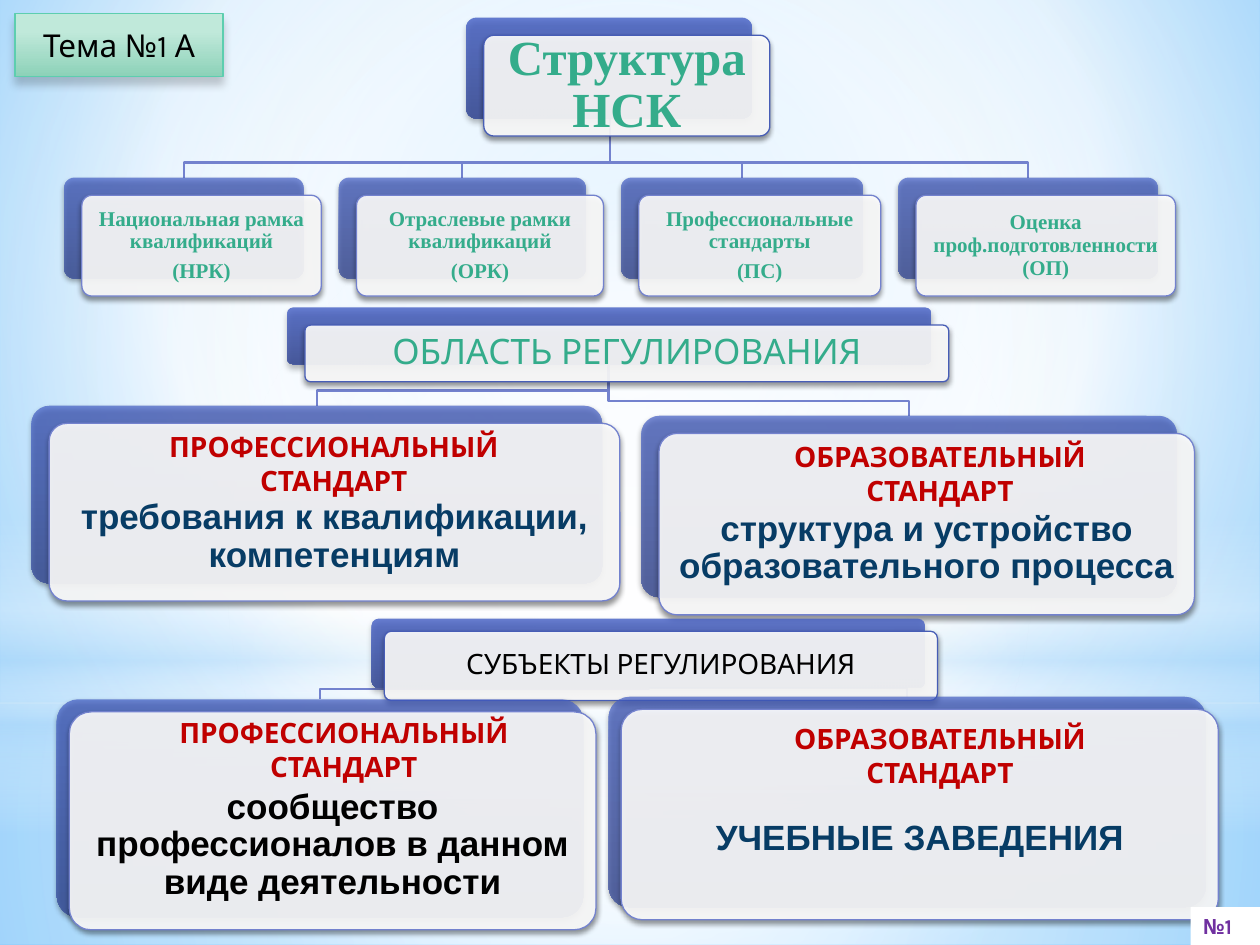
from lxml.etree import SubElement
from pptx import Presentation
from pptx.dml.color import RGBColor
from pptx.enum.shapes import MSO_SHAPE
from pptx.enum.text import MSO_ANCHOR, PP_ALIGN
from pptx.oxml.ns import qn
from pptx.util import Inches, Pt

WHITE = RGBColor(0xFF, 0xFF, 0xFF)
BLACK = RGBColor(0x00, 0x00, 0x00)
SKY = RGBColor(0xB4, 0xDC, 0xFA)
SKY_LIGHT = RGBColor(0x9E, 0xD5, 0xFF)
SKY_DEEP = RGBColor(0x5B, 0xB9, 0xFF)
BLUE_TOP = RGBColor(0x43, 0x5E, 0xC5)
BLUE_BOTTOM = RGBColor(0x2B, 0x40, 0x92)
BRANCH_BLUE = RGBColor(0x73, 0x82, 0xCE)
ROOT_BLUE = RGBColor(0x47, 0x5D, 0xB6)
GREEN = RGBColor(0x34, 0xAC, 0x8B)
MINT_TOP = RGBColor(0xC0, 0xE9, 0xDA)
MINT_BOTTOM = RGBColor(0x8C, 0xD1, 0xB8)
MINT_LINE = RGBColor(0x5D, 0xCE, 0xAF)
RED = RGBColor(0xC0, 0x00, 0x00)
NAVY = RGBColor(0x07, 0x3C, 0x65)
PURPLE = RGBColor(0x70, 0x30, 0xA0)

SERIF, SANS, BODY = "Times New Roman", "Karla", "Arial"
CENTER_FOCUS = (50, 50, 50, 50)
CARD_SHADOW = (45, 3.1, 1.8)
ROOT_SHADOW = (32, 3.5, 2.2)
EMPTY_LINE = 0.39


def add_color(parent, color, alpha):
    node = SubElement(parent, qn("a:srgbClr"), val=str(color))
    if alpha < 100:
        SubElement(node, qn("a:alpha"), val=str(alpha * 1000))


def set_gradient(properties, stops, focus=None):
    solid = properties.find(qn("a:solidFill"))
    gradient = SubElement(properties, qn("a:gradFill"), rotWithShape="1")
    properties.replace(solid, gradient)
    stop_list = SubElement(gradient, qn("a:gsLst"))
    for position, color, alpha in stops:
        stop = SubElement(stop_list, qn("a:gs"), pos=str(position * 1000))
        add_color(stop, color, alpha)
    if focus:
        circle = SubElement(gradient, qn("a:path"), **{"path": "circle"})
        sides = {side: str(value * 1000) for side, value in zip("ltrb", focus)}
        SubElement(circle, qn("a:fillToRect"), **sides)
    else:
        SubElement(gradient, qn("a:lin"), ang="5400000", scaled="0")


def add_shadow(shape, alpha, blur, distance):
    effects = shape.element.spPr.find(qn("a:effectLst"))
    shadow = SubElement(effects, qn("a:outerShdw"), blurRad=str(Pt(blur)),
                        dist=str(Pt(distance)), dir="5400000", rotWithShape="0")
    add_color(shadow, BLACK, alpha)


def add_panel(slide, kind, box, fill=WHITE, stops=None, focus=None, line=None):
    shape = slide.shapes.add_shape(kind, *map(Inches, box))
    shape.shadow.inherit = False
    shape.fill.solid()
    shape.fill.fore_color.rgb = fill
    if stops:
        set_gradient(shape.element.spPr, stops, focus)
    if line is None:
        shape.line.fill.background()
    else:
        shape.line.color.rgb = line
        shape.line.width = Pt(0.75)
    if kind == MSO_SHAPE.ROUNDED_RECTANGLE:
        shape.adjustments[0] = 0.1
    return shape


def write(shape, lines, font, size, color, bold=True, align=PP_ALIGN.CENTER):
    frame = shape.text_frame
    frame.word_wrap = True
    for index, line in enumerate(lines):
        paragraph = frame.add_paragraph() if index else frame.paragraphs[0]
        paragraph.text = line
        paragraph.alignment = align
        paragraph.font.name = font
        paragraph.font.size = Pt(size)
        paragraph.font.bold = bold
        paragraph.font.color.rgb = color
    return frame


def add_background(slide):
    slide.background.fill.solid()
    set_gradient(slide.element.find(".//" + qn("p:bgPr")),
                 [(0, SKY_LIGHT, 100), (60, WHITE, 100), (100, SKY_DEEP, 100)],
                 (20, 10, 20, 60))
    rectangle = MSO_SHAPE.RECTANGLE
    add_panel(slide, rectangle, (0, 5.58, 10, 1.92), focus=CENTER_FOCUS,
              stops=[(0, WHITE, 91), (37, WHITE, 76), (100, SKY, 79)])
    add_panel(slide, rectangle, (0, 0, 10, 5.58), focus=CENTER_FOCUS,
              stops=[(0, WHITE, 89), (48, WHITE, 62), (100, SKY, 79)])
    add_panel(slide, rectangle, (0, 4.12, 10, 2.5),
              stops=[(0, WHITE, 0), (29, WHITE, 30), (45, SKY, 40),
                     (55, WHITE, 26), (65, SKY, 60), (100, WHITE, 0)])
    add_panel(slide, MSO_SHAPE.OVAL, (0, 1.75, 10, 5.58), focus=CENTER_FOCUS,
              stops=[(0, WHITE, 100), (56, WHITE, 0)])


def add_branch(slide, start, bend, end):
    points = [(start[0], bend), (end[0], bend), end]
    builder = slide.shapes.build_freeform(Inches(start[0]), Inches(start[1]))
    builder.add_line_segments([(Inches(x), Inches(y)) for x, y in points], close=False)
    branch = builder.convert_to_shape()
    branch.shadow.inherit = False
    branch.fill.background()
    branch.line.color.rgb = BRANCH_BLUE
    branch.line.width = Pt(1.25)


def add_card(slide, box, offset, lines, font, size, color, bold=True,
             inset=0.08, top_gap=0, root=False):
    left, top, width, height = box
    alpha = 80 if root else 70
    rounded = MSO_SHAPE.ROUNDED_RECTANGLE
    back = add_panel(slide, rounded, box,
                     stops=[(0, BLUE_TOP, alpha), (100, BLUE_BOTTOM, alpha)])
    add_shadow(back, *(ROOT_SHADOW if root else CARD_SHADOW))
    front = add_panel(slide, rounded, (left + offset, top + offset, width, height),
                      line=ROOT_BLUE if root else BRANCH_BLUE)
    fill_color = front.element.spPr.find(qn("a:solidFill"))[0]
    SubElement(fill_color, qn("a:alpha"), val="90000")
    add_shadow(front, *CARD_SHADOW)
    edge = min(width, height) * 0.03
    label = slide.shapes.add_textbox(
        Inches(left + offset + edge), Inches(top + offset + edge),
        Inches(width - 2 * edge), Inches(height - 2 * edge))
    frame = write(label, lines, font, size, color, bold)
    frame.vertical_anchor = MSO_ANCHOR.MIDDLE
    frame.margin_left = frame.margin_right = frame.margin_bottom = Inches(inset)
    frame.margin_top = Inches(inset + top_gap)
    for paragraph in frame.paragraphs:
        paragraph.line_spacing = 0.9
        paragraph.space_after = Pt(size * 0.35)


def add_heading(slide, box, lines):
    heading = slide.shapes.add_textbox(*map(Inches, box))
    write(heading, lines, SANS, 16, RED)


def add_structure(slide):
    columns = [
        (0.51, 1.9, ["Национальная рамка квалификаций", "(НРК)"]),
        (2.69, 1.96, ["Отраслевые рамки квалификаций", "(ОРК)"]),
        (4.93, 1.92, ["Профессиональные стандарты", "(ПС)"]),
        (7.13, 2.06, ["Оценка проф.подготовленности (ОП)"]),
    ]
    for left, width, _ in columns:
        add_branch(slide, (4.84, 0.94), 1.29, (left + width / 2, 1.41))
    add_card(slide, (3.7, 0.14, 2.27, 0.8), 0.14, ["Структура НСК"],
             SERIF, 28, GREEN, inset=0.12, root=True)
    for left, width, lines in columns:
        add_card(slide, (left, 1.41, width, 0.8), 0.14, lines,
                 SERIF, 12, GREEN, inset=0.05)


def add_section(slide, root_box, offset, title, size, color, start, cards):
    for (left, top, width, _), _, _, bend in cards:
        add_branch(slide, start, bend, (left + width / 2, top))
    add_card(slide, root_box, offset, [title], SANS, size, color, bold=False, root=True)
    for box, text, text_color, _ in cards:
        add_card(slide, box, offset, [text], BODY, 20, text_color, top_gap=EMPTY_LINE)


def add_headings(slide, left, professional_top, educational_top):
    add_heading(slide, (left, professional_top, 4.06, 0.64),
                ["ПРОФЕССИОНАЛЬНЫЙ", "СТАНДАРТ"])
    add_heading(slide, (5.7, educational_top, 3.52, 0.64),
                ["ОБРАЗОВАТЕЛЬНЫЙ", "СТАНДАРТ"])


def add_labels(slide):
    number = add_panel(slide, MSO_SHAPE.RECTANGLE, (9.45, 7.2, 0.55, 0.3))
    frame = write(number, ["№1"], SANS, 12, PURPLE, align=PP_ALIGN.LEFT)
    frame.vertical_anchor = MSO_ANCHOR.TOP
    topic = add_panel(slide, MSO_SHAPE.RECTANGLE, (0.12, 0.11, 1.65, 0.5), line=MINT_LINE,
                      stops=[(28, MINT_TOP, 100), (100, MINT_BOTTOM, 100)])
    add_shadow(topic, 20, 5, 4)
    write(topic, ["Тема №1 А"], SANS, 18, BLACK, bold=False)


def main():
    presentation = Presentation()
    presentation.slide_width, presentation.slide_height = Inches(10), Inches(7.5)
    slide = presentation.slides.add_slide(presentation.slide_layouts[6])
    add_background(slide)
    add_structure(slide)
    add_section(slide, (2.28, 2.44, 5.11, 0.45), 0.14, "ОБЛАСТЬ РЕГУЛИРОВАНИЯ", 20, GREEN, (4.83, 2.89), [
        ((0.25, 3.22, 4.53, 1.41), "требования к квалификации, компетенциям", NAVY, 3.1),
        ((5.09, 3.3, 4.25, 1.44), "структура и устройство образовательного процесса", NAVY, 3.18)])
    add_headings(slide, 0.62, 3.36, 3.44)
    add_section(slide, (2.95, 4.91, 4.39, 0.55), 0.1, "СУБЪЕКТЫ РЕГУЛИРОВАНИЯ", 16, BLACK, (5.15, 5.46), [
        ((0.45, 5.55, 4.18, 1.73), "сообщество профессионалов в данном виде деятельности", BLACK, 5.47),
        ((4.83, 5.53, 4.74, 1.67), "УЧЕБНЫЕ ЗАВЕДЕНИЯ", NAVY, 5.46)])
    add_headings(slide, 0.7, 5.63, 5.68)
    add_labels(slide)
    presentation.save("out.pptx")


if __name__ == "__main__":
    main()
